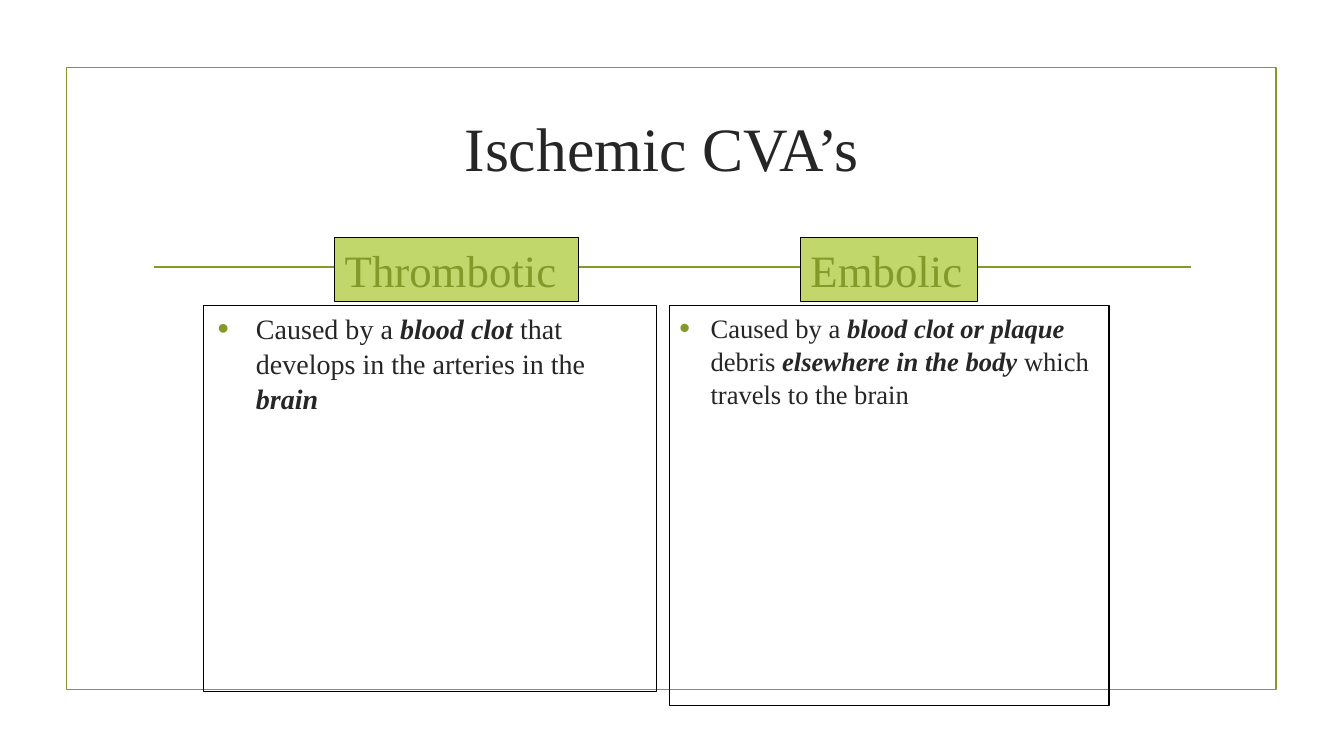
from dataclasses import dataclass

from lxml import etree
from pptx import Presentation
from pptx.dml.color import RGBColor
from pptx.enum import shapes, text
from pptx.oxml import ns
from pptx.shapes.autoshape import Shape
from pptx.slide import Slide
from pptx.util import Inches, Pt

FONT = "Times New Roman"
COLORS = {"olive": "83992A", "lime": "C1D66B", "ink": "262626", "black": "000000"}
HEADING_TOP, HEADING_HEIGHT, BODY_TOP = 2.36, 0.63, 3.03


@dataclass
class Column:
    heading: str
    heading_left: float
    heading_width: float
    body_left: float
    body_width: float
    body_height: float
    text_size: int
    margin: float
    indent: float
    runs: list[tuple[str, bool]]  # wording, emphasised


COLUMNS = [
    Column("Thrombotic", 3.32, 2.42, 2.02, 4.49, 3.83, 20, 0.42, 0.38, [
        ("Caused by a ", False), ("blood clot ", True),
        ("that develops in the arteries in the ", False), ("brain", True)]),
    Column("Embolic", 7.94, 1.76, 6.64, 4.36, 3.97, 19, 0.31, 0.31, [
        ("Caused by a ", False), ("blood clot or plaque", True), (" debris ", False),
        ("elsewhere in the body", True), (" which travels to the brain", False)]),
]


def color(name: str) -> RGBColor:
    return RGBColor.from_string(COLORS[name])


def set_font(paragraph, size: int, color_name: str) -> None:
    paragraph.font.name = FONT
    paragraph.font.size = Pt(size)
    paragraph.font.color.rgb = color(color_name)


def add_box(slide: Slide, left: float, top: float, width: float, height: float,
            line: str, line_width: float, fill: str | None = None) -> Shape:
    box = slide.shapes.add_shape(shapes.MSO_SHAPE.RECTANGLE, Inches(left), Inches(top),
                                 Inches(width), Inches(height))
    box.shadow.inherit = False
    box.line.color.rgb = color(line)
    box.line.width = Pt(line_width)
    if fill:
        box.fill.solid()
        box.fill.fore_color.rgb = color(fill)
    else:
        box.fill.background()
    box.text_frame.word_wrap = True
    return box


def add_bullet(paragraph, margin: float, indent: float) -> None:
    properties = paragraph._p.get_or_add_pPr()
    properties.set("marL", str(Inches(margin)))
    properties.set("indent", str(-Inches(indent)))
    bullet_color = etree.SubElement(properties, ns.qn("a:buClr"))
    etree.SubElement(bullet_color, ns.qn("a:srgbClr"), val=COLORS["olive"])
    etree.SubElement(properties, ns.qn("a:buSzPct"), val="115000")
    etree.SubElement(properties, ns.qn("a:buFont"), typeface="Arial")
    etree.SubElement(properties, ns.qn("a:buChar"), char="•")


def add_column(slide: Slide, column: Column) -> None:
    heading = add_box(slide, column.heading_left, HEADING_TOP, column.heading_width,
                      HEADING_HEIGHT, "black", 0.75, "lime")
    heading.text_frame.vertical_anchor = text.MSO_ANCHOR.BOTTOM
    paragraph = heading.text_frame.paragraphs[0]
    paragraph.text = column.heading
    paragraph.alignment = text.PP_ALIGN.LEFT
    set_font(paragraph, 32, "olive")

    body = add_box(slide, column.body_left, BODY_TOP, column.body_width,
                   column.body_height, "black", 0.75)
    body.text_frame.vertical_anchor = text.MSO_ANCHOR.TOP
    paragraph = body.text_frame.paragraphs[0]
    add_bullet(paragraph, column.margin, column.indent)
    paragraph.alignment = text.PP_ALIGN.LEFT
    paragraph.line_spacing = 1.04
    set_font(paragraph, column.text_size, "ink")
    for wording, emphasised in column.runs:
        run = paragraph.add_run()
        run.text = wording
        if emphasised:
            run.font.bold = run.font.italic = True


def add_rule(slide: Slide) -> None:
    rule = slide.shapes.add_connector(shapes.MSO_CONNECTOR.STRAIGHT, Inches(1.53),
                                      Inches(2.65), Inches(11.81), Inches(2.65))
    rule.line.color.rgb = color("olive")
    rule.line.width = Pt(1.25)
    etree.SubElement(rule._element.spPr, ns.qn("a:effectLst"))


def format_title(slide: Slide) -> None:
    title = slide.shapes.title
    title.left, title.top = Inches(2.92), Inches(0.74)
    title.width, title.height = Inches(7.44), Inches(1.43)
    title.text_frame.vertical_anchor = text.MSO_ANCHOR.MIDDLE
    paragraph = title.text_frame.paragraphs[0]
    paragraph.text = "Ischemic CVA’s "
    paragraph.alignment = text.PP_ALIGN.CENTER
    set_font(paragraph, 44, "ink")


def main() -> None:
    presentation = Presentation()
    presentation.slide_width = Inches(13.33)
    presentation.slide_height = Inches(7.5)
    slide = presentation.slides.add_slide(presentation.slide_layouts[5])
    format_title(slide)
    add_box(slide, 0.66, 0.67, 12, 6.17, "olive", 1.25)
    add_rule(slide)
    for column in COLUMNS:
        add_column(slide, column)
    presentation.save("out.pptx")


if __name__ == "__main__":
    main()
